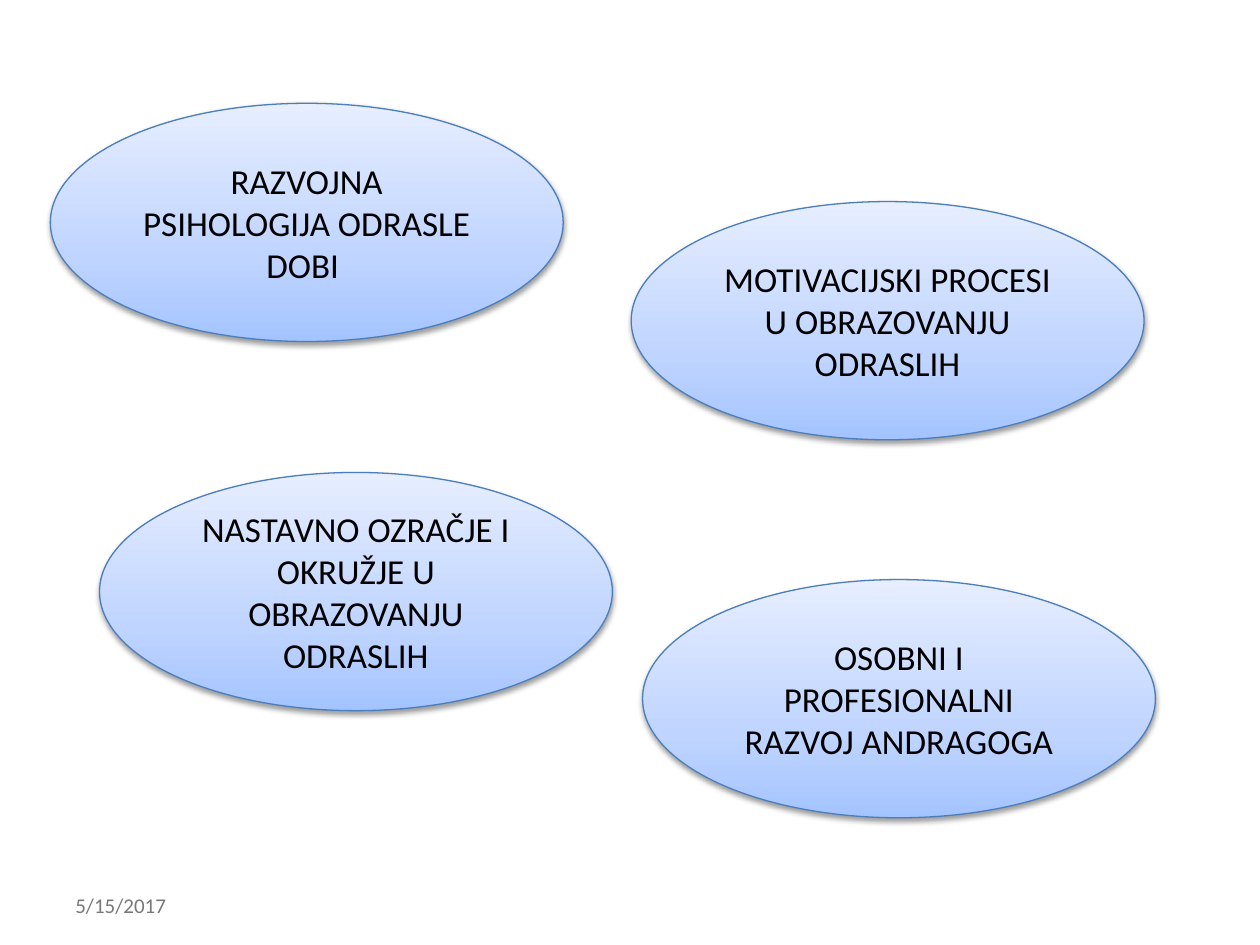
"""Build a slide with four topic ovals and a date."""
from copy import deepcopy

from lxml.etree import SubElement as Sub
from pptx import Presentation
from pptx.dml.color import RGBColor as RGB
from pptx.enum.shapes import MSO_SHAPE as Shape
from pptx.enum.text import MSO_ANCHOR as Anchor, PP_ALIGN as Align
from pptx.oxml.ns import qn
from pptx.util import Inches, Pt

TOPICS = [
    (0.4, 0.82, "RAZVOJNA PSIHOLOGIJA ODRASLE DOBI "),
    (5.01, 1.6, "MOTIVACIJSKI PROCESI U OBRAZOVANJU ODRASLIH"),
    (0.79, 3.75, "NASTAVNO OZRAČJE I OKRUŽJE U OBRAZOVANJU ODRASLIH"),
    (5.1, 4.6, "OSOBNI I PROFESIONALNI RAZVOJ ANDRAGOGA"),
]
DATE = "5/15/2017"
SIZE = (4.07, 1.89)
COLORS = {"deep": "A4C4FF", "mid": "BFD4FF", "pale": "E6EEFF",
          "edge": "4B7EBC", "text": "000000", "date": "777877"}
STOPS = [("deep", 0), ("mid", 0.35), ("pale", 1)]


def color(name):
    return RGB.from_string(COLORS[name])


def write(shape, text, size, name, align):
    frame = shape.text_frame
    frame.word_wrap = True
    frame.vertical_anchor = Anchor.MIDDLE
    para = frame.paragraphs[0]
    para.alignment = align
    run = para.add_run()
    run.text = text
    run.font.name = "Calibri"
    run.font.size = Pt(size)
    run.font.color.rgb = color(name)


def shade(shape):
    fill = shape.fill
    fill.gradient()
    fill.gradient_angle = 90
    stops = shape._element.spPr.find(qn("a:gradFill")).find(qn("a:gsLst"))
    stops.append(deepcopy(stops[-1]))
    for stop, (name, pos) in zip(fill.gradient_stops, STOPS):
        stop.color.rgb = color(name)
        stop.position = pos


def cast(shape):
    shape.shadow.inherit = False
    effects = shape._element.spPr.find(qn("a:effectLst"))
    shadow = Sub(effects, qn("a:outerShdw"), blurRad=str(Pt(3.1)),
                 dist=str(Pt(1.6)), dir="5400000", rotWithShape="0")
    tone = Sub(shadow, qn("a:srgbClr"), val=COLORS["text"])
    Sub(tone, qn("a:alpha"), val="38000")


def main():
    deck = Presentation()
    deck.slide_width, deck.slide_height = Inches(10), Inches(7.5)
    shapes = deck.slides.add_slide(deck.slide_layouts[6]).shapes
    date = shapes.add_textbox(*map(Inches, (0.5, 6.98, 2.33, 0.4)))
    write(date, DATE, 12, "date", Align.LEFT)
    for left, top, text in TOPICS:
        oval = shapes.add_shape(Shape.OVAL, *map(Inches, (left, top, *SIZE)))
        shade(oval)
        oval.line.color.rgb = color("edge")
        oval.line.width = Pt(0.75)
        cast(oval)
        write(oval, text, 20, "text", Align.CENTER)
    deck.save("out.pptx")


if __name__ == "__main__":
    main()
